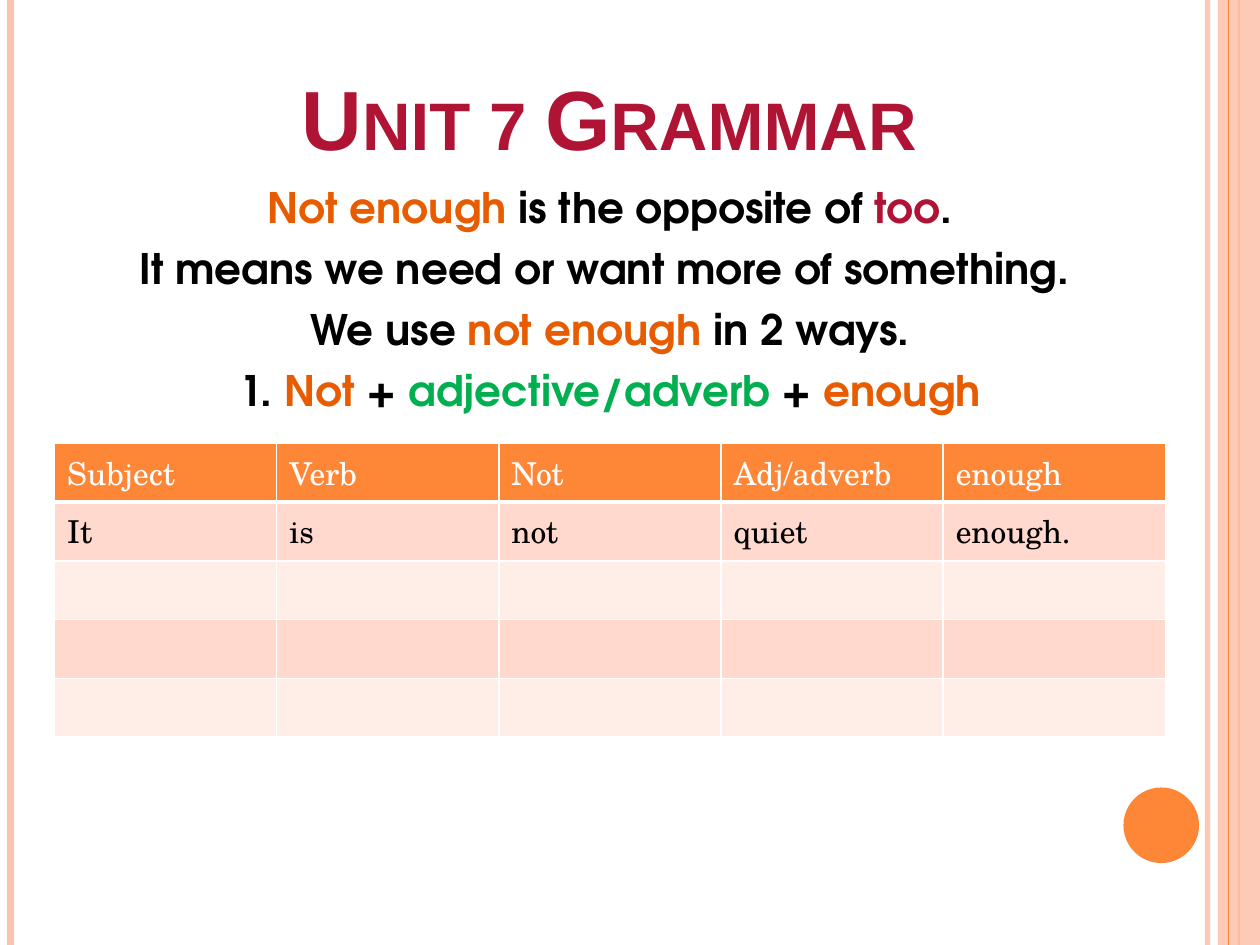
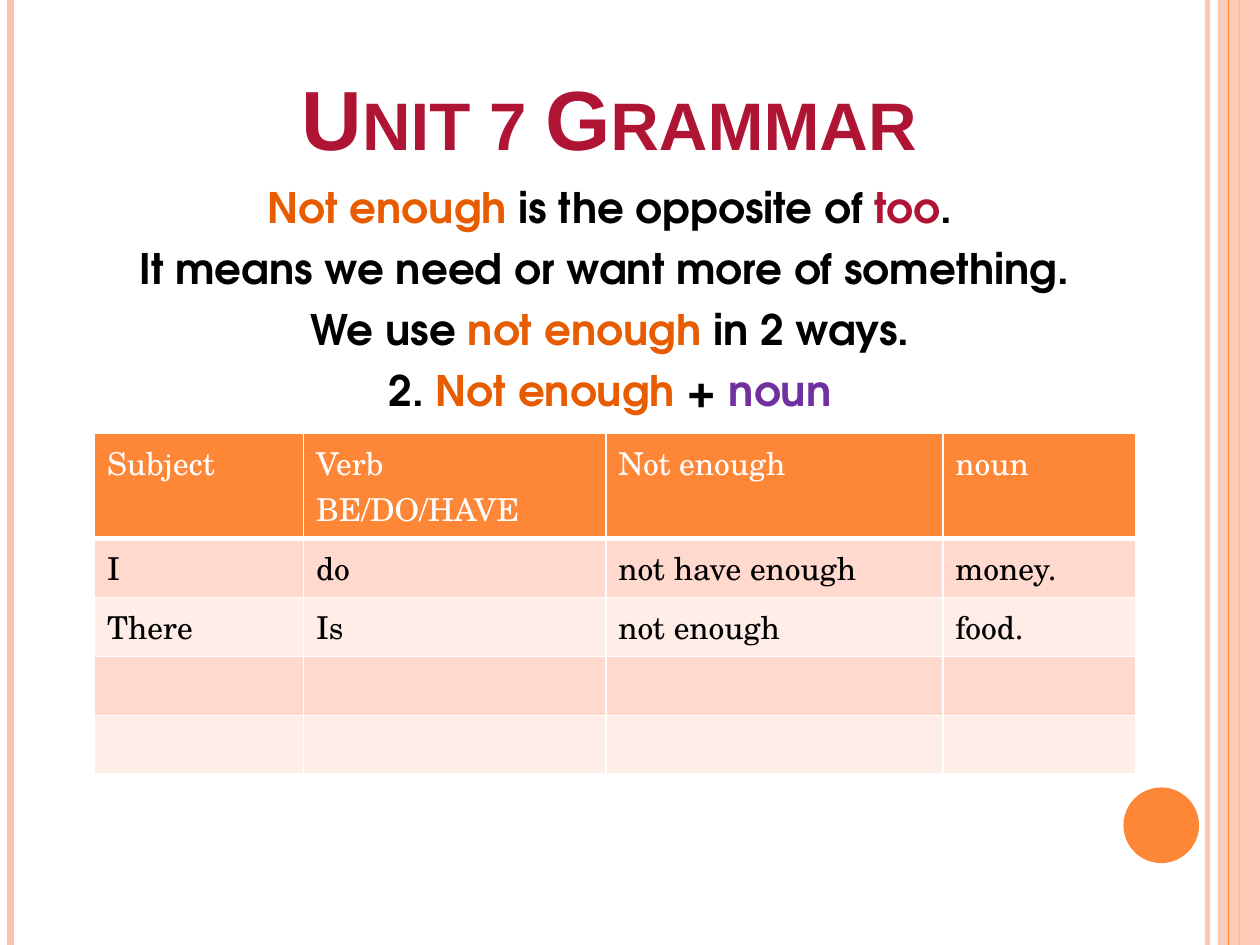
from dataclasses import dataclass
from typing import Any

from lxml import etree
from pptx import Presentation
from pptx.dml.color import RGBColor
from pptx.enum.shapes import MSO_CONNECTOR, MSO_SHAPE
from pptx.enum.text import MSO_ANCHOR, MSO_AUTO_SIZE, PP_ALIGN
from pptx.oxml.ns import qn
from pptx.util import Emu, Inches, Pt

STRAIGHT = MSO_CONNECTOR.STRAIGHT
RECTANGLE, OVAL = MSO_SHAPE.RECTANGLE, MSO_SHAPE.OVAL
CENTER, TOP, BOTTOM = PP_ALIGN.CENTER, MSO_ANCHOR.TOP, MSO_ANCHOR.BOTTOM
NO_FIT = MSO_AUTO_SIZE.NONE

SLIDE_WIDTH, SLIDE_HEIGHT = Inches(10), Inches(7.5)
GRID_COLUMNS, GRID_ROWS = 120, 90
COLORS = {
    "peach": "FEC3AE", "orange": "FE8637", "crimson": "B01435",
    "rust": "E75C01", "black": "000000", "green": "00B050",
    "purple": "7030A0", "white": "FFFFFF",
    "band_dark": "FFD9CE", "band_light": "FFEDE8",
}
TITLE_FONT = {"name": "Arial", "size": Pt(48), "bold": True}
BODY_FONT = {"name": "TeX Gyre Adventor", "size": Pt(24), "bold": True}
TABLE_FONT = {"name": "TeX Gyre Schola", "size": Pt(18), "bold": False}
BODY_FRAME = {"word_wrap": True, "auto_size": NO_FIT, "vertical_anchor": TOP}
TITLE_FRAME = {"word_wrap": True, "auto_size": NO_FIT, "vertical_anchor": BOTTOM}
BODY_PARAGRAPH = {"alignment": CENTER, "space_before": Pt(6), "line_spacing": 1.0}
TITLE_TEXT = "Unit 7 Grammar"
ROW_HEIGHT = 5.6


@dataclass(frozen=True)
class Area:
    column: float
    row: float
    columns: float
    rows: float

    def place(self) -> dict[str, Emu]:
        return {
            "left": across(self.column), "top": down(self.row),
            "width": across(self.columns), "height": down(self.rows),
        }


@dataclass(frozen=True)
class Stripe:
    column: float
    color: str
    points: float
    opacity: int = 100


@dataclass(frozen=True)
class Block:
    preset: Any
    area: Area
    color: str
    opacity: int = 100


@dataclass(frozen=True)
class Span:
    text: str
    color: str = "black"


@dataclass(frozen=True)
class Line:
    spans: list[Span]
    indent: float = 0.3


@dataclass(frozen=True)
class Grid:
    column: float
    row: float
    widths: list[float]
    header_height: float
    rows: list[list[str]]
    empty_rows: int


@dataclass(frozen=True)
class Lesson:
    pattern: Line
    grid: Grid


TITLE_AREA = Area(9, 1.5, 98, 15)
BODY_AREA = Area(6.1, 16.7, 104, 64)
STRIPES = [
    Stripe(115, "peach", 3, 93),
    Stripe(1, "peach", 4.5),
    Stripe(118, "orange", 1.5),
]
BLOCKS = [
    Block(RECTANGLE, Area(116, 0, 4, GRID_ROWS), "peach", 87),
    Block(OVAL, Area(107, 75, 7.2, 7.2), "orange"),
]
THIN_STRIPE = Stripe(117, "orange", 0.75)
INTRODUCTION = [
    Line([Span("Not enough ", "rust"), Span("is the opposite of "),
          Span("too", "crimson"), Span(".")]),
    Line([Span("It means we need or want more of something. ")]),
    Line([Span("We use "), Span("not enough ", "rust"), Span("in 2 ways.")]),
]
LESSONS = [
    Lesson(
        Line([Span("1. "), Span("Not", "rust"), Span(" + "),
              Span("adjective/adverb", "green"), Span(" + "),
              Span("enough", "rust")], 0.5),
        Grid(5.2, 42.2, [21.16] * 5, ROW_HEIGHT, [
            ["Subject", "Verb", "Not", "Adj/adverb", "enough"],
            ["It", "is", "not", "quiet", "enough."],
        ], 3),
    ),
    Lesson(
        Line([Span("2. "), Span("Not enough ", "rust"), Span("+ "),
              Span("noun", "purple")]),
        Grid(9, 41.3, [19.9, 28.8, 32.1, 18.4], 9.9, [
            ["Subject", "Verb\nBE/DO/HAVE", "Not enough", "noun"],
            ["I", "do", "not have enough", "money."],
            ["There", "Is", "not enough", "food."],
        ], 2),
    ),
]


def across(columns: float) -> Emu:
    return Emu(round(SLIDE_WIDTH * columns / GRID_COLUMNS))


def down(rows: float) -> Emu:
    return Emu(round(SLIDE_HEIGHT * rows / GRID_ROWS))


def rgb(name: str) -> RGBColor:
    return RGBColor.from_string(COLORS[name])


def assign(target: Any, values: dict[str, Any]) -> None:
    for name, value in values.items():
        setattr(target, name, value)


def set_opacity(shape: Any, percent: int) -> None:
    if percent < 100:
        for color in shape._element.spPr.iter(qn("a:srgbClr")):
            etree.SubElement(color, qn("a:alpha"), val=str(percent * 1000))


def draw_stripe(page: Any, stripe: Stripe) -> Any:
    place = across(stripe.column)
    connector = page.shapes.add_connector(STRAIGHT, place, 0, place, SLIDE_HEIGHT)
    connector.line.color.rgb = rgb(stripe.color)
    connector.line.width = Pt(stripe.points)
    etree.SubElement(connector._element.spPr, qn("a:effectLst"))
    set_opacity(connector, stripe.opacity)
    return connector


def draw_block(page: Any, block: Block) -> Any:
    shape = page.shapes.add_shape(block.preset, **block.area.place())
    shape.shadow.inherit = False
    shape.fill.solid()
    shape.fill.fore_color.rgb = rgb(block.color)
    shape.line.fill.background()
    set_opacity(shape, block.opacity)
    return shape


def decorate_layout(layout: Any, page: Any) -> None:
    band, disc = BLOCKS
    shapes = [draw_stripe(page, stripe) for stripe in STRIPES]
    shapes += [draw_block(page, band), draw_stripe(page, THIN_STRIPE),
               draw_block(page, disc)]
    for shape in shapes:
        layout.shapes._spTree.append(shape._element)


def add_span(para: Any, span: Span, font: dict[str, Any]) -> Any:
    run = para.add_run()
    run.text = span.text
    assign(run.font, font)
    run.font.color.rgb = rgb(span.color)
    return run


def write_title(box: Any) -> None:
    assign(box, TITLE_AREA.place())
    assign(box.text_frame, TITLE_FRAME)
    para = box.text_frame.paragraphs[0]
    para.alignment = CENTER
    run = add_span(para, Span(TITLE_TEXT, "crimson"), TITLE_FONT)
    run.font._element.set("cap", "small")


def write_body(box: Any, lines: list[Line]) -> None:
    assign(box, BODY_AREA.place())
    frame = box.text_frame
    assign(frame, BODY_FRAME)
    for index, line in enumerate(lines):
        para = frame.add_paragraph() if index else frame.paragraphs[0]
        assign(para, BODY_PARAGRAPH)
        properties = para._p.get_or_add_pPr()
        properties.set("marL", str(Inches(line.indent)))
        properties.set("indent", str(-Inches(line.indent)))
        etree.SubElement(properties, qn("a:buNone"))
        for span in line.spans:
            add_span(para, span, BODY_FONT)


def style_cell(cell: Any, fill: str, bottom: float) -> None:
    cell.fill.solid()
    cell.fill.fore_color.rgb = rgb(fill)
    properties = cell._tc.get_or_add_tcPr()
    borders = {"lnL": 1, "lnR": 1, "lnT": 1, "lnB": bottom}
    for index, (side, points) in enumerate(borders.items()):
        border = etree.Element(qn(f"a:{side}"), w=str(Pt(points)))
        solid = etree.SubElement(border, qn("a:solidFill"))
        etree.SubElement(solid, qn("a:srgbClr"), val=COLORS["white"])
        properties.insert(index, border)


def draw_grid(page: Any, grid: Grid) -> None:
    blank = [""] * len(grid.widths)
    rows = grid.rows + [blank] * grid.empty_rows
    heights = [grid.header_height] + [ROW_HEIGHT] * (len(rows) - 1)
    area = Area(grid.column, grid.row, sum(grid.widths), sum(heights))
    table = page.shapes.add_table(len(rows), len(blank), **area.place()).table
    for column, width in zip(table.columns, grid.widths):
        column.width = across(width)
    for row, height in zip(table.rows, heights):
        row.height = down(height)
    for row_index, texts in enumerate(rows):
        header = row_index == 0
        band = "band_dark" if row_index % 2 else "band_light"
        for column_index, text in enumerate(texts):
            cell = table.cell(row_index, column_index)
            style_cell(cell, "orange" if header else band, 3 if header else 1)
            cell.text = text
            for para in cell.text_frame.paragraphs:
                for run in para.runs:
                    assign(run.font, TABLE_FONT)
                    run.font.color.rgb = rgb("white" if header else "black")


def main() -> None:
    deck = Presentation()
    assign(deck, {"slide_width": SLIDE_WIDTH, "slide_height": SLIDE_HEIGHT})
    layout = deck.slide_layouts.get_by_name("Title and Content")
    pages = [deck.slides.add_slide(layout) for _ in LESSONS]
    decorate_layout(layout, pages[0])
    for page, lesson in zip(pages, LESSONS):
        write_title(page.shapes.title)
        write_body(page.placeholders[1], INTRODUCTION + [lesson.pattern])
        draw_grid(page, lesson.grid)
    deck.save("out.pptx")


if __name__ == "__main__":
    main()
